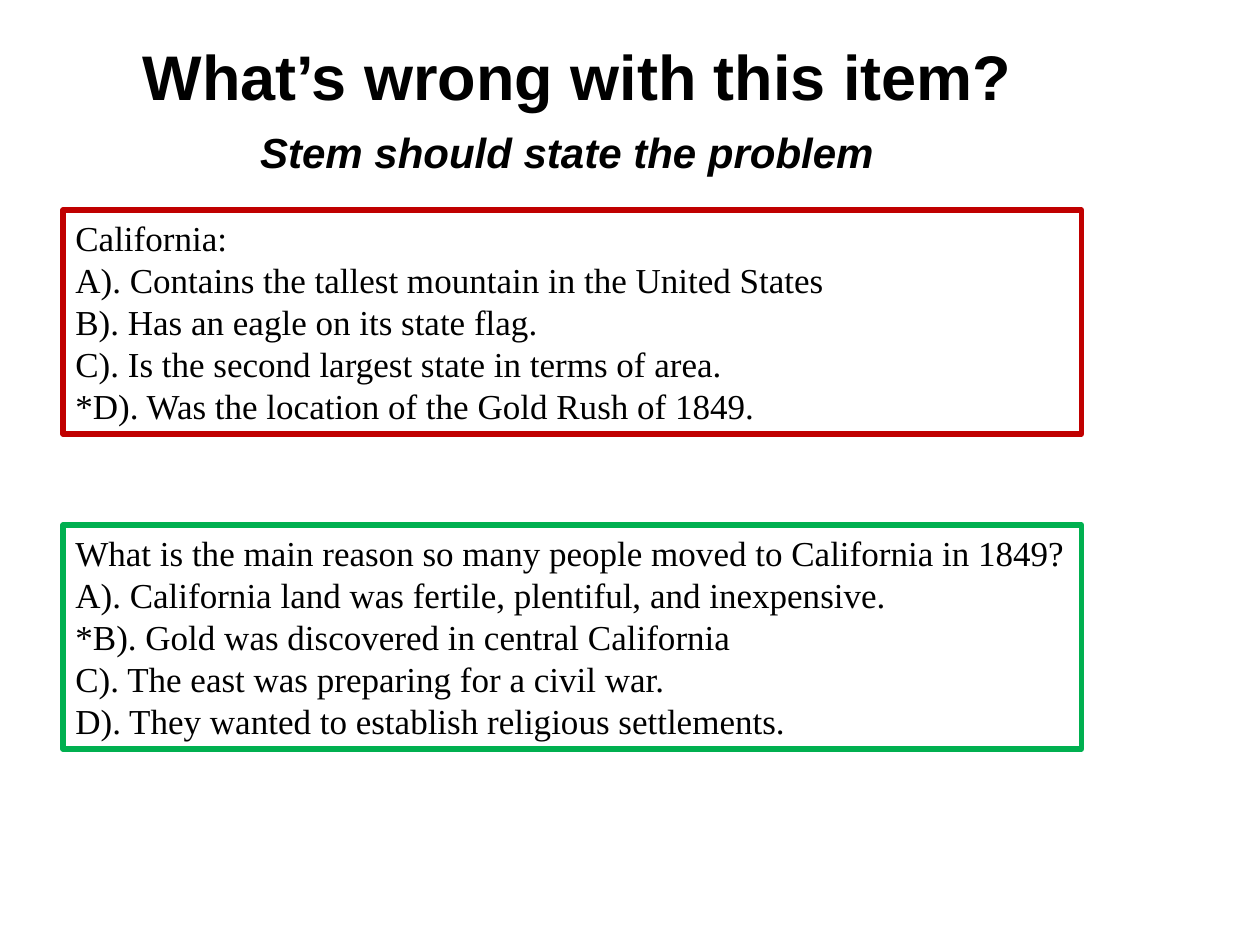
from pptx import Presentation
from pptx.dml.color import RGBColor
from pptx.enum.shapes import MSO_SHAPE
from pptx.enum.text import MSO_ANCHOR, MSO_AUTO_SIZE, PP_ALIGN
from pptx.util import Pt


def color(value):
    return RGBColor.from_string(value)


def write(shape, text, font_name, size, align, bold=False, italic=False, wrap=True):
    frame = shape.text_frame
    frame.text = text
    frame.word_wrap = wrap
    frame.auto_size = MSO_AUTO_SIZE.SHAPE_TO_FIT_TEXT
    frame.vertical_anchor = MSO_ANCHOR.TOP
    for para in frame.paragraphs:
        para.alignment = align
        para.line_spacing = 1.0
        para.space_before = Pt(0)
        for span in para.runs:
            span.font.name = font_name
            span.font.size = Pt(size)
            span.font.bold = bold
            span.font.italic = italic
            span.font.color.rgb = color("000000")


deck = Presentation()
deck.slide_width, deck.slide_height = Pt(720), Pt(540)
page = deck.slides.add_slide(deck.slide_layouts[5])

title = page.shapes.title
title.left, title.top, title.width, title.height = Pt(72), Pt(18), Pt(516), Pt(51)
write(title, "What’s wrong with this item?", "Arial", 36, PP_ALIGN.CENTER, bold=True, wrap=False)

items = [
    (120, "C00000", [
        "California:",
        "A). Contains the tallest mountain in the United States",
        "B). Has an eagle on its state flag.",
        "C). Is the second largest state in terms of area.",
        "*D). Was the location of the Gold Rush of 1849.",
    ]),
    (300, "00B050", [
        "What is the main reason so many people moved to California in 1849?",
        "A). California land was fertile, plentiful, and inexpensive.",
        "*B). Gold was discovered in central California",
        "C). The east was preparing for a civil war.",
        "D). They wanted to establish religious settlements.",
    ]),
]
for top, outline, lines in items:
    box = page.shapes.add_shape(MSO_SHAPE.RECTANGLE, Pt(36), Pt(top), Pt(582), Pt(128))
    box.shadow.inherit = False
    box.fill.solid()
    box.fill.fore_color.rgb = color("FFFFFF")
    box.line.color.rgb = color(outline)
    box.line.width = Pt(3.15)
    write(box, "\n".join(lines), "Times New Roman", 20, PP_ALIGN.LEFT)

subtitle = page.shapes.add_textbox(Pt(126), Pt(69), Pt(396), Pt(37))
write(subtitle, "Stem should state the problem", "Arial", 24, PP_ALIGN.CENTER, bold=True, italic=True)

deck.save("out.pptx")
